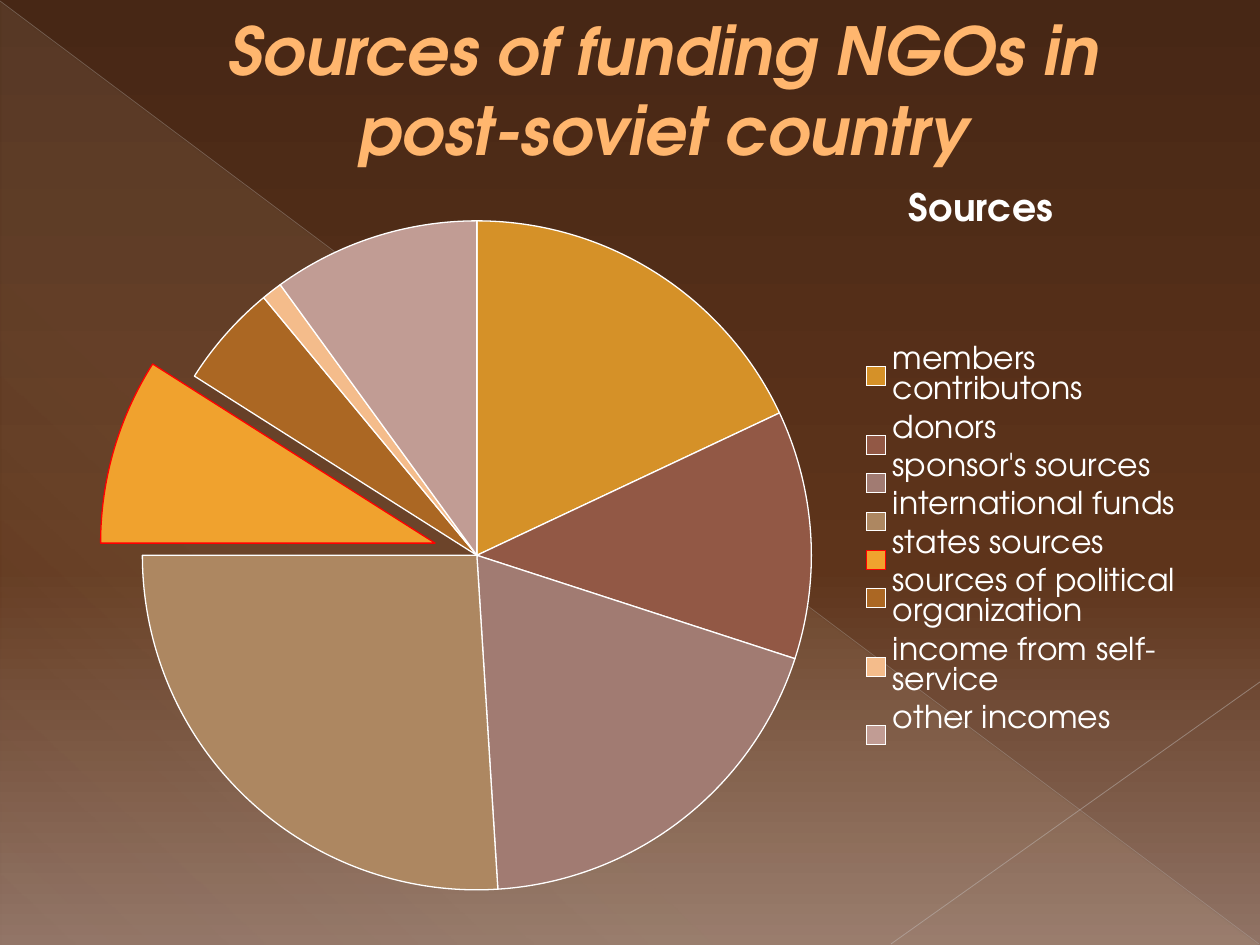
from lxml import etree
from pptx import Presentation
from pptx import util as u
from pptx.chart import data as chart_data
from pptx.dml import color
from pptx.enum import chart as charts, shapes, text
from pptx.oxml import ns, parse_xml

PX = 914400 // 126
FONT = "TeX Gyre Adventor"
WHITE = "FFFFFF"
SOURCES = [
    ("members contributons", 18, "D59128"),
    ("donors", 12, "925845"),
    ("sponsor's sources", 19, "A17B72"),
    ("international funds", 26, "AD8761"),
    ("states sources", 9, "F0A22E"),
    ("sources of political organization", 5, "AB6723"),
    ("income from self-service", 1, "F4BC8B"),
    ("other incomes", 10, "C19C94"),
]
PULLED_OUT = 4


def px(*lengths):
    return [length * PX for length in lengths]


def rgb(value):
    return color.RGBColor.from_string(value)


def set_font(font, fill, **values):
    for name, value in {"name": FONT, **values}.items():
        setattr(font, name, value)
    font.fill.solid()
    font.fill.fore_color.rgb = rgb(fill)


def set_line(line, fill, width):
    line.fill.solid()
    line.fill.fore_color.rgb = rgb(fill)
    line.width = u.Pt(width)


def add_alpha(parent, percent):
    for tint in parent.iter(ns.qn("a:srgbClr")):
        etree.SubElement(tint, ns.qn("a:alpha"), val=str(percent * 1000))


def set_gradient(fill, parent, stops, angle):
    """Stops are (position, colour, opacity), all in percent."""
    fill.gradient()
    gradient = parent.find(ns.qn("a:gradFill"))
    for part in list(gradient):
        gradient.remove(part)
    stop_list = etree.SubElement(gradient, ns.qn("a:gsLst"))
    for position, tint, opacity in stops:
        stop = etree.SubElement(stop_list, ns.qn("a:gs"), pos=str(position * 1000))
        etree.SubElement(stop, ns.qn("a:srgbClr"), val=tint)
        add_alpha(stop, opacity)
    etree.SubElement(gradient, ns.qn("a:lin"), ang=str(angle * 60000), scaled="0")


def add_background(page):
    fill = page.background.fill
    fill.solid()
    properties = page.element.find(".//" + ns.qn("p:bgPr"))
    stops = [(0, "472715", 100), (60, "5E341B", 100), (100, "907365", 100)]
    set_gradient(fill, properties, stops, 90)


def add_triangle(page):
    triangle = page.shapes.add_shape(
        shapes.MSO_SHAPE.RIGHT_TRIANGLE, *px(1, 2, 1258, 943))
    triangle.shadow.inherit = False
    triangle.line.fill.background()
    stops = [(0, "FBEEC9", 10), (70, "FBEEC9", 8), (100, "FBEEC9", 1)]
    set_gradient(triangle.fill, triangle.element.spPr, stops, 133)


def add_line(page, ends, tint, width, opacity):
    line = page.shapes.add_connector(shapes.MSO_CONNECTOR.STRAIGHT, *px(*ends))
    set_line(line.line, tint, width)
    properties = line.element.spPr
    add_alpha(properties, opacity)
    etree.SubElement(properties, ns.qn("a:effectLst"))


def add_title(page, wording):
    box = page.shapes.add_textbox(*px(63, 0, 1134, 178))
    frame = box.text_frame
    frame.word_wrap = True
    frame.vertical_anchor = text.MSO_ANCHOR.MIDDLE
    para = frame.paragraphs[0]
    para.alignment = text.PP_ALIGN.CENTER
    para._p.get_or_add_pPr().set("marL", str(67 * PX))
    span = para.add_run()
    span.text = wording
    set_font(span.font, "FFB66E", size=u.Pt(37.8), bold=True, italic=True)
    # Thin outline around the letters
    outline = parse_xml(
        f'<a:ln {ns.nsdecls("a")} w="{u.Pt(0.5)}"><a:solidFill>'
        '<a:srgbClr val="A67020"/></a:solidFill></a:ln>')
    span.font._element.insert(0, outline)


def set_layout(element, followers, **values):
    """Place a chart part by fractions of the chart's size."""
    for old in element.findall(ns.qn("c:layout")):
        element.remove(old)
    layout = etree.Element(ns.qn("c:layout"))
    manual = etree.SubElement(layout, ns.qn("c:manualLayout"))
    for name, value in values.items():
        etree.SubElement(manual, ns.qn("c:" + name), val=str(value))
    tags = [ns.qn("c:" + name) for name in followers]
    spot = next((i for i, child in enumerate(element) if child.tag in tags),
                len(element))
    element.insert(spot, layout)


def add_pie(page):
    data = chart_data.CategoryChartData()
    names, values, _ = zip(*SOURCES)
    data.categories = names
    data.add_series("Series 1", values)
    frame = page.shapes.add_chart(
        charts.XL_CHART_TYPE.PIE, *px(63, 168, 1134, 738), data)
    chart = frame.chart
    set_font(chart.font, WHITE, size=u.Pt(18))

    # Slices
    plot = chart.plots[0]
    plot.vary_by_categories = True
    for index, (_, _, tint) in enumerate(SOURCES):
        point = plot.series[0].points[index]
        point.format.fill.solid()
        point.format.fill.fore_color.rgb = rgb(tint)
        pulled = index == PULLED_OUT
        set_line(point.format.line, "FF0000" if pulled else WHITE, 0.75)
        if pulled:
            shape = point.format.fill._xPr
            explosion = etree.Element(ns.qn("c:explosion"), val="13")
            shape.addprevious(explosion)

    # Heading and legend
    chart.has_title = True
    heading = chart.chart_title
    heading.include_in_layout = False
    span = heading.text_frame.paragraphs[0].add_run()
    span.text = "Sources"
    set_font(span.font, WHITE, size=u.Pt(21.6), bold=True)
    chart.has_legend = True
    legend = chart.legend
    legend.position = charts.XL_LEGEND_POSITION.RIGHT
    legend.include_in_layout = False
    set_font(legend.font, WHITE, size=u.Pt(18))

    # Places of the parts
    edges = {"xMode": "edge", "yMode": "edge"}
    set_layout(heading._element, ["overlay", "spPr", "txPr"],
               **edges, x=0.74, y=0.02)
    set_layout(legend._element, ["overlay", "spPr", "txPr"],
               **edges, x=0.7, y=0.23, w=0.29, h=0.55)
    set_layout(plot._element.getparent(), ["pieChart"], layoutTarget="inner",
               **edges, x=0.07, y=0.07, w=0.59, h=0.91)


def main():
    deck = Presentation()
    deck.slide_width, deck.slide_height = px(1260, 945)
    page = deck.slides.add_slide(deck.slide_layouts[6])
    add_background(page)
    add_triangle(page)
    add_line(page, (0, 1, 1259, 944), "BCB7B4", 0.39, 35)
    add_line(page, (1260, 682, 891, 944), "C4BFBD", 0.47, 45)
    add_title(page, "Sources of funding NGOs in post-soviet country")
    add_pie(page)
    deck.save("out.pptx")


if __name__ == "__main__":
    main()
